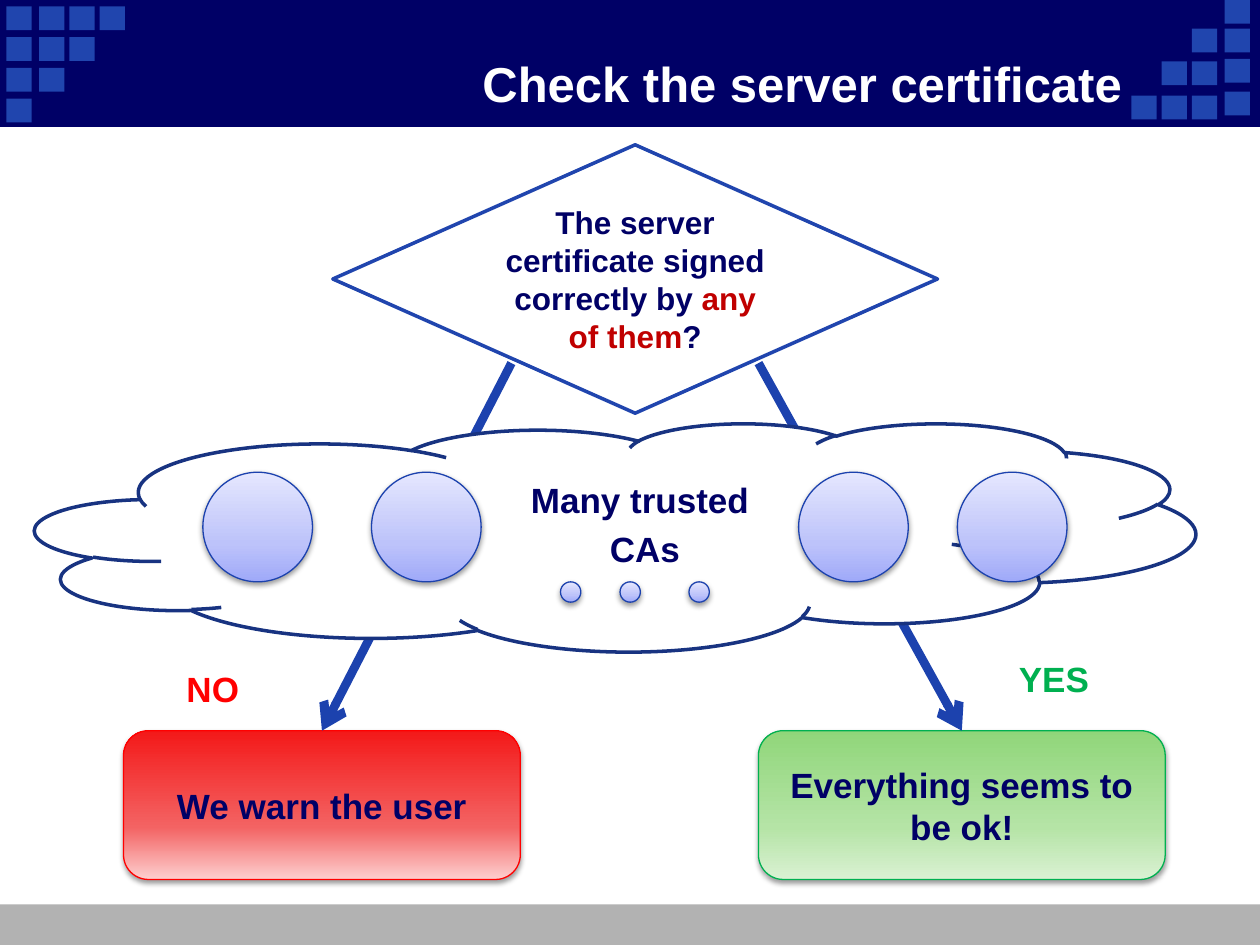
from copy import deepcopy

from lxml import etree
from pptx import Presentation
from pptx import util as u
from pptx.dml.color import RGBColor
from pptx.enum import shapes, text
from pptx.oxml import parse_xml
from pptx.oxml.ns import nsdecls, qn

NAVY = RGBColor(0x00, 0x00, 0x66)
BLUE = RGBColor(0x20, 0x45, 0xAE)
ARROW_BLUE = RGBColor(0x1C, 0x42, 0xAE)
CLOUD_BLUE = RGBColor(0x18, 0x33, 0x81)
GREY = RGBColor(0xB2, 0xB2, 0xB2)
WHITE = RGBColor(0xFF, 0xFF, 0xFF)
RED = RGBColor(0xFF, 0x00, 0x00)
DARK_RED = RGBColor(0xC0, 0x00, 0x00)
GREEN = RGBColor(0x00, 0xB0, 0x50)

# Gradient colours from bottom to top
RED_FADE = [RGBColor(0xFD, 0xCF, 0xCF), RGBColor(0xF3, 0x63, 0x63), RGBColor(0xF3, 0x19, 0x19)]
GREEN_FADE = [RGBColor(0xDA, 0xF1, 0xD3), RGBColor(0xB5, 0xE4, 0xA6), RGBColor(0x90, 0xD6, 0x7A)]
BLUE_FADE = [RGBColor(0x9F, 0xA9, 0xF9), RGBColor(0xBD, 0xC3, 0xFA), RGBColor(0xE5, 0xE7, 0xFE)]

KIND = shapes.MSO_SHAPE
ALIGN = text.PP_ALIGN
ANCHOR = text.MSO_ANCHOR


def write(shape, paragraphs, *, size=20, color=NAVY, align=ALIGN.CENTER,
          anchor=ANCHOR.MIDDLE, before=0):
    """Fill a shape with paragraphs, each a list of (words, colour or None)."""
    frame = shape.text_frame
    frame.word_wrap = True
    frame.vertical_anchor = anchor
    for index, spans in enumerate(paragraphs):
        para = frame.add_paragraph() if index else frame.paragraphs[0]
        para.alignment = align
        para.space_before = u.Pt(before)
        for words, span_color in spans:
            span = para.add_run()
            span.text = words
            span.font.name = "Arial"
            span.font.size = u.Pt(size)
            span.font.bold = True
            span.font.color.rgb = span_color or color


def add_label(page, box, paragraphs, **style):
    write(page.shapes.add_textbox(*map(u.Cm, box)), paragraphs, **style)


def add_block(page, kind, box, fill, line=None, width=0.75):
    shape = page.shapes.add_shape(kind, *map(u.Cm, box))
    shape.shadow.inherit = False
    shape.fill.solid()
    shape.fill.fore_color.rgb = fill
    if line is None:
        shape.line.fill.background()
    else:
        shape.line.color.rgb = line
        shape.line.width = u.Pt(width)
    return shape


def add_raised(page, kind, box, fade, line):
    """A block with a three-stop upward gradient and a soft shadow."""
    shape = add_block(page, kind, box, WHITE, line)
    shape.fill.gradient()
    shape.fill.gradient_angle = 90
    stop_list = shape._element.spPr.find(qn("a:gradFill")).find(qn("a:gsLst"))
    stop_list.insert(1, deepcopy(stop_list[0]))
    for stop, place, color in zip(shape.fill.gradient_stops, (0, 0.35, 1), fade):
        stop.position = place
        stop.color.rgb = color
    effects = shape._element.spPr.find(qn("a:effectLst"))
    effects.append(parse_xml(
        f'<a:outerShdw {nsdecls("a")} blurRad="40000" dist="20000" dir="5400000" rotWithShape="0">'
        '<a:srgbClr val="000000"><a:alpha val="38000"/></a:srgbClr></a:outerShdw>'))
    return shape


def add_arrow(page, start, target):
    """An arrow from a point to the top of the target block."""
    x, y = map(u.Cm, start)
    arrow = page.shapes.add_connector(shapes.MSO_CONNECTOR.STRAIGHT, x, y, x, y)
    arrow.end_connect(target, 0)
    arrow.line.color.rgb = ARROW_BLUE
    arrow.line.width = u.Pt(5)
    etree.SubElement(arrow.line._get_or_add_ln(), qn("a:tailEnd"), type="arrow")
    etree.SubElement(arrow._element.spPr, qn("a:effectLst"))


def add_corner_steps(page, lefts, columns):
    """Squares in columns that get one shorter at each step from the edge."""
    for step, (left, tops) in enumerate(zip(lefts, columns)):
        for top in tops[:len(lefts) - step]:
            add_block(page, KIND.RECTANGLE, (left, top, 0.51, 0.48), BLUE)


def add_header(page, box):
    left, top, width, height = box
    add_block(page, KIND.RECTANGLE, box, NAVY, NAVY)
    offsets = (0, 0.66, 1.27, 1.88)
    down = [top + 0.13 + 0.62 * row for row in range(4)]
    add_corner_steps(page, [left + 0.13 + x for x in offsets], [down] * 4)
    edge = [top + y for y in (1.85, 1.19, 0.58, 0)]
    up = [top + y for y in (1.93, 1.24, 0.58)]
    add_corner_steps(page, [left + width - 0.71 - x for x in offsets], [edge] + [up] * 3)
    add_label(page, (left + 2.34, top + 0.89, 20.52, 1.57),
              [[("Check the server certificate", None)]],
              size=28, color=WHITE, align=ALIGN.RIGHT)


def add_outcome(page, box, words, fade, line):
    shape = add_raised(page, KIND.FLOWCHART_ALTERNATE_PROCESS, box, fade, line)
    write(shape, [[(words, None)]])
    return shape


def add_authorities(page, box):
    """The cloud of trusted authorities with its circles and dots."""
    left, top, width, height = box
    add_block(page, KIND.CLOUD, box, WHITE, CLOUD_BLUE, 2)
    add_label(page, (left + 8.99, top + 0.99, 6.6, 2.01),
              [[("Many trusted ", None)], [("CAs", None)]],
              anchor=ANCHOR.TOP, before=4)
    circles = [(x, 0.99, 2.21) for x in (3.38, 6.78, 15.39, 18.59)]
    dots = [(x, 3.2, 0.41) for x in (10.59, 11.79, 13.18)]
    for x, y, size in circles + dots:
        add_raised(page, KIND.FLOWCHART_CONNECTOR, (left + x, top + y, size, size),
                   BLUE_FADE, ARROW_BLUE)


def add_question(page, box):
    """The decision diamond, its text sized to stay inside the outline."""
    diamond = add_block(page, KIND.FLOWCHART_DECISION, box, WHITE, BLUE, 2)
    write(diamond, [[("The server certificate signed correctly by ", None),
                     ("any of them", DARK_RED), ("?", None)]], size=18)


def main():
    deck = Presentation()
    deck.slide_width, deck.slide_height = u.Cm(25.4), u.Cm(19.05)
    page = deck.slides.add_slide(deck.slide_layouts[6])

    # Footer band and header
    add_block(page, KIND.RECTANGLE, (0, 18.23, 25.4, 0.82), GREY)
    add_header(page, (0, 0, 25.4, 2.54))

    # Outcomes and the arrows that run behind the cloud
    warning = add_outcome(page, (2.49, 14.73, 8, 3), "We warn the user", RED_FADE, RED)
    success = add_outcome(page, (15.29, 14.73, 8.2, 3), "Everything seems to be ok!",
                          GREEN_FADE, GREEN)
    add_arrow(page, (10.31, 7.32), warning)
    add_arrow(page, (15.29, 7.32), success)

    # Cloud and question
    add_authorities(page, (0.71, 8.53, 23.39, 4.6))
    add_question(page, (6.71, 2.92, 12.19, 5.41))

    # Branch labels
    for box, words, color in (((20.29, 13.13, 3.2, 1.11), "YES", GREEN),
                              ((3.51, 13.33, 1.8, 1.11), "NO", RED)):
        add_label(page, box, [[(words, None)]], color=color,
                  align=ALIGN.LEFT, anchor=ANCHOR.TOP)

    deck.save("out.pptx")


if __name__ == "__main__":
    main()
